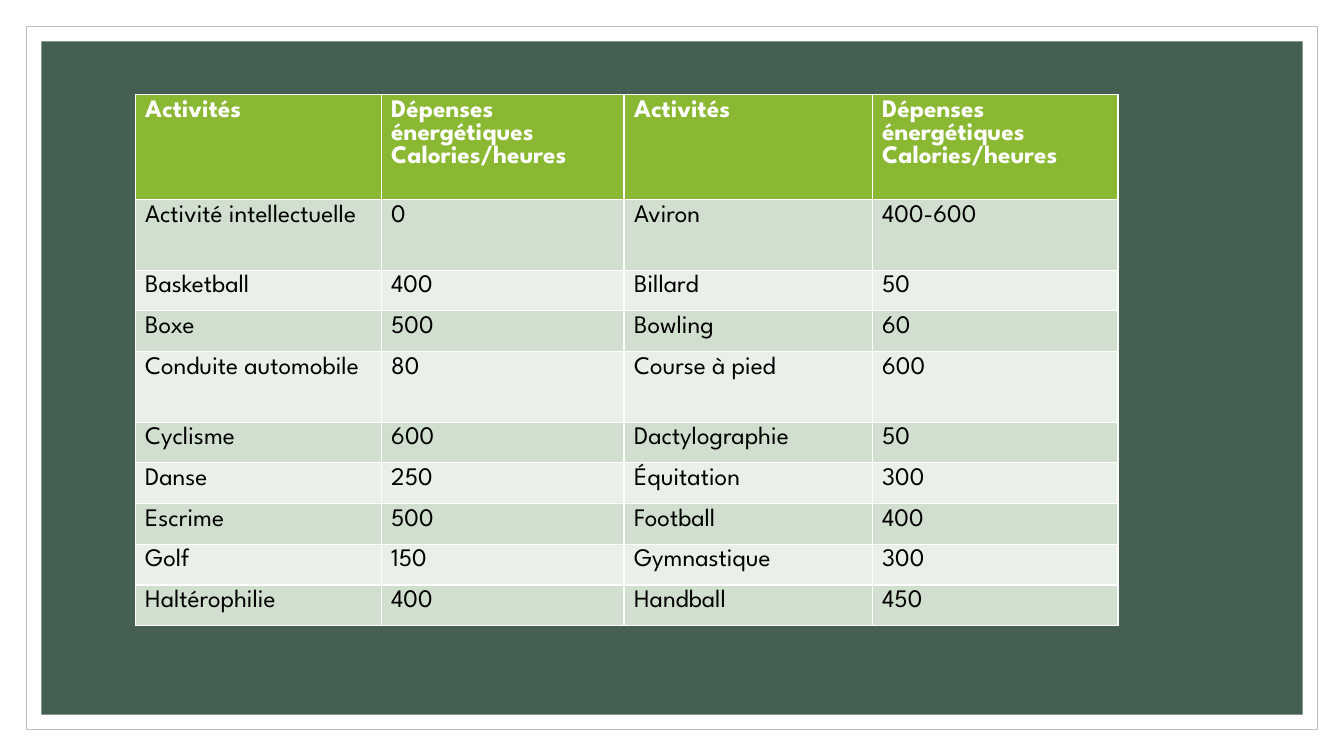
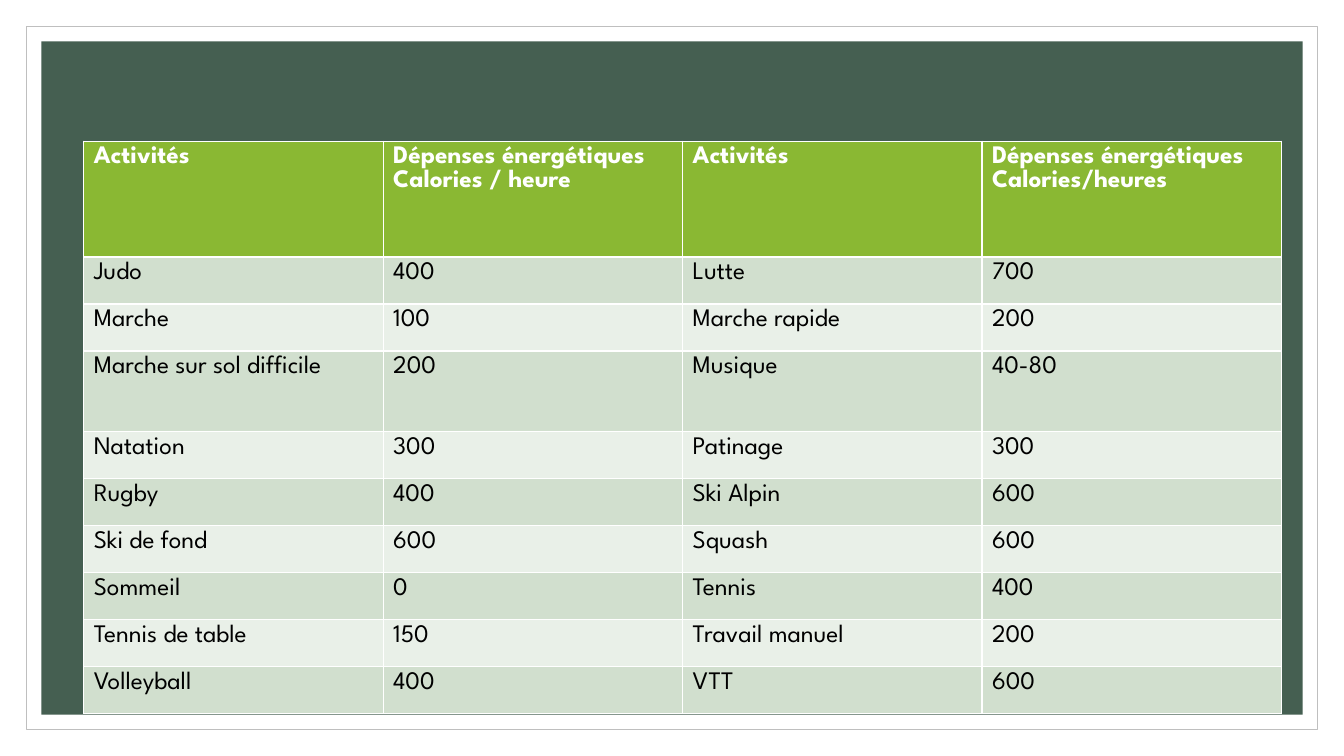
from pptx import Presentation
from pptx.dml.color import RGBColor
from pptx.enum.shapes import MSO_SHAPE as SHAPE
from pptx.util import Inches, Pt

WHITE = RGBColor(0xFF, 0xFF, 0xFF)
BLACK = RGBColor(0x00, 0x00, 0x00)
GREY = RGBColor(0xBF, 0xBF, 0xBF)
DARK_GREEN = RGBColor(0x45, 0x5F, 0x51)
LIME = RGBColor(0x8A, 0xB8, 0x33)
BANDS = [RGBColor(0xD1, 0xDF, 0xCE), RGBColor(0xE9, 0xF0, 0xE8)]
BODY_FONT = {"name": "League Spartan", "size": Pt(18), "bold": False}
HEAD_FONT = {**BODY_FONT, "bold": True}

HEAD = ["Activités", "Dépenses énergétiques\nCalories/heures"]

TABLES = [
    {
        "at": (1.34, 0.94),
        "cols": [2.44, 2.41, 2.46, 2.44],
        "height": 5.27,
        "tall": {0: 1.04, 1: 0.7, 4: 0.7},
        "rows": [
            HEAD + HEAD,
            ["Activité intellectuelle", "0", "Aviron", "400-600"],
            ["Basketball", "400", "Billard", "50"],
            ["Boxe", "500", "Bowling", "60"],
            ["Conduite automobile", "80", "Course à pied", "600"],
            ["Cyclisme", "600", "Dactylographie", "50"],
            ["Danse", "250", "Équitation", "300"],
            ["Escrime", "500", "Football", "400"],
            ["Golf", "150", "Gymnastique", "300"],
            ["Haltérophilie", "400", "Handball", "450"],
        ],
    },
    {
        "at": (0.83, 1.4),
        "cols": [2.97] * 4,
        "height": 5.68,
        "tall": {0: 1.15, 3: 0.8},
        "rows": [
            ["Activités", "Dépenses énergétiques\nCalories / heure"] + HEAD,
            ["Judo", "400", "Lutte", "700"],
            ["Marche", "100", "Marche rapide", "200"],
            ["Marche sur sol difficile", "200", "Musique", "40-80"],
            ["Natation", "300", "Patinage", "300"],
            ["Rugby", "400", "Ski Alpin", "600"],
            ["Ski de fond", "600", "Squash", "600"],
            ["Sommeil", "0", "Tennis", "400"],
            ["Tennis de table", "150", "Travail manuel", "200"],
            ["Volleyball", "400", "VTT", "600"],
        ],
    },
]

prs = Presentation()
prs.slide_width = Inches(13.33)
prs.slide_height = Inches(7.5)
layout = prs.slide_layouts[6]
slides = [prs.slides.add_slide(layout) for _ in TABLES]

for margin, fill, line in [(0.26, WHITE, GREY), (0.41, DARK_GREEN, None)]:
    sp = slides[0].shapes.add_shape(
        SHAPE.RECTANGLE, Inches(margin), Inches(margin),
        Inches(13.33 - 2 * margin), Inches(7.5 - 2 * margin))
    sp.shadow.inherit = False
    sp.fill.solid()
    sp.fill.fore_color.rgb = fill
    if line is None:
        sp.line.fill.background()
    else:
        sp.line.color.rgb = line
        sp.line.width = Pt(0.5)
    layout.shapes._spTree.append(sp._element)

for s, spec_table in zip(slides, TABLES):
    rows, cols, tall = spec_table["rows"], spec_table["cols"], spec_table["tall"]
    left, top = spec_table["at"]
    row_height = (spec_table["height"] - sum(tall.values())) / (len(rows) - len(tall))
    table = s.shapes.add_table(
        len(rows), len(cols), Inches(left), Inches(top),
        Inches(sum(cols)), Inches(spec_table["height"])).table
    for column, width in zip(table.columns, cols):
        column.width = Inches(width)
    for i, texts in enumerate(rows):
        table.rows[i].height = Inches(tall.get(i, row_height))
        for j, text in enumerate(texts):
            cell = table.cell(i, j)
            cell.fill.solid()
            cell.fill.fore_color.rgb = BANDS[(i - 1) % 2] if i else LIME
            cell.text_frame.text = text
            for p in cell.text_frame.paragraphs:
                for r in p.runs:
                    for key, value in (BODY_FONT if i else HEAD_FONT).items():
                        setattr(r.font, key, value)
                    r.font.color.rgb = BLACK if i else WHITE

prs.save("out.pptx")
